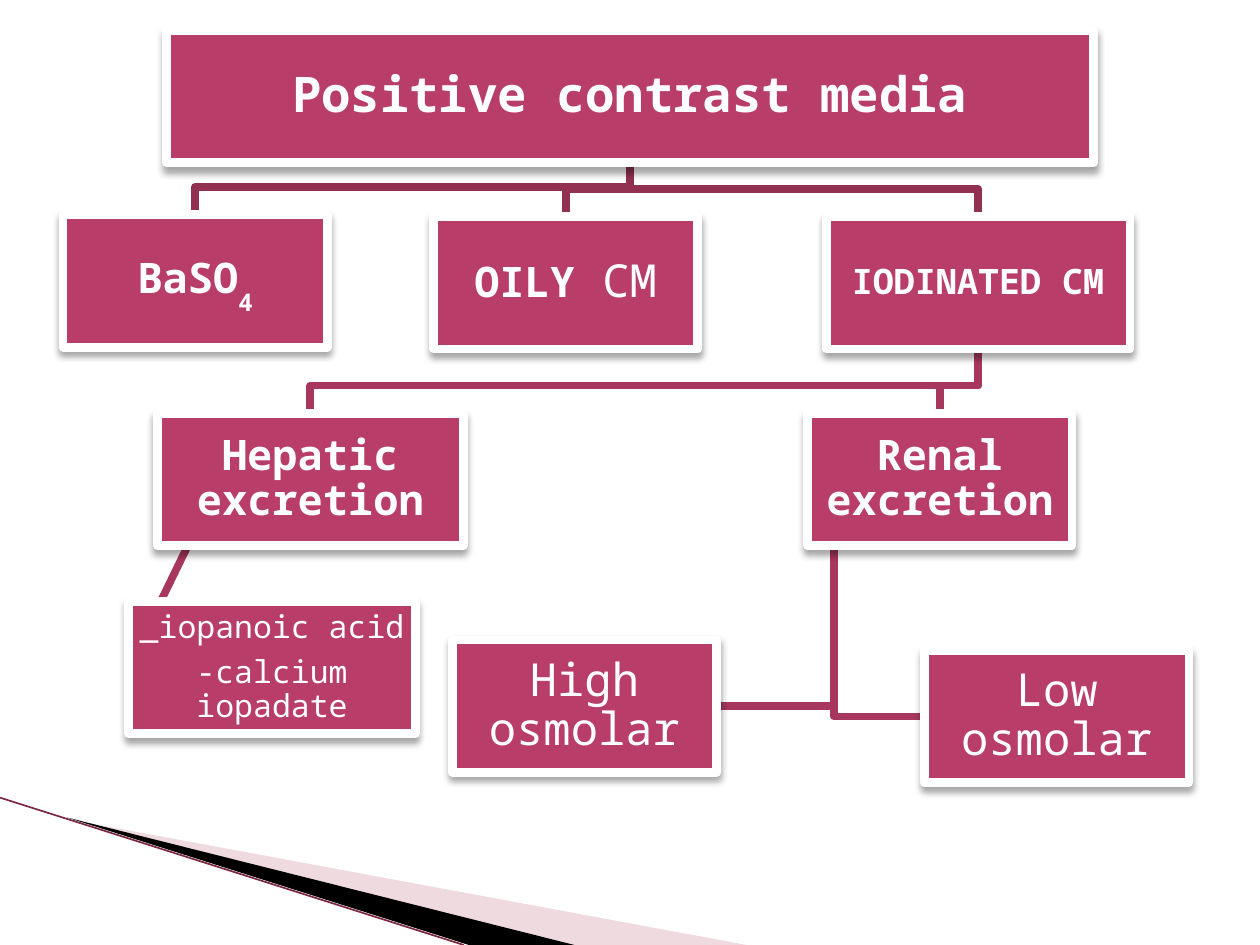
from lxml import etree
from pptx import Presentation
from pptx.dml.color import RGBColor
from pptx.enum.shapes import MSO_CONNECTOR, MSO_SHAPE
from pptx.enum.text import MSO_ANCHOR, MSO_AUTO_SIZE, PP_ALIGN
from pptx.oxml import parse_xml
from pptx.oxml.ns import qn
from pptx.util import Cm, Pt

RECT, STRAIGHT = MSO_SHAPE.RECTANGLE, MSO_CONNECTOR.STRAIGHT
MIDDLE, CENTER, NO_FIT = MSO_ANCHOR.MIDDLE, PP_ALIGN.CENTER, MSO_AUTO_SIZE.NONE

THEME = {
    "font": "Noto Sans Mono",
    "box": RGBColor(0xB8, 0x3D, 0x68),
    "white": RGBColor(0xFF, 0xFF, 0xFF),
    "black": RGBColor(0, 0, 0),
    "top": RGBColor(0x93, 0x31, 0x53),
    "low": RGBColor(0xA7, 0x37, 0x5E),
    "wedge": RGBColor(0xD8, 0xA3, 0xAF),
    "edge": RGBColor(0x7B, 0x28, 0x41),
    "title": 28, "leaf": 26, "head": 24, "iodine": 20, "drug": 18,
}
SHADOW = (
    '<a:outerShdw xmlns:a="http://schemas.openxmlformats.org/drawingml/2006/main"'
    ' blurRad="50800" dist="38100" dir="5400000" rotWithShape="0">'
    '<a:srgbClr val="000000"><a:alpha val="35000"/></a:srgbClr></a:outerShdw>'
)
HIGH = 2.67   # height of every box
DROP = 0.56   # from a branch line down to the box below it

# name: left, top, width, type size, bold, paragraphs
BOXES = {
    "title": (3.35, 0.61, 18.69, "title", True, ["Positive contrast media"]),
    "barium": (1.27, 4.33, 5.33, "head", True, ["BaSO"]),
    "iodine": (16.66, 4.37, 6.12, "iodine", True, ["IODINATED CM"]),
    "liver": (3.17, 8.33, 6.17, "head", True, ["Hepatic excretion"]),
    "drugs": (2.59, 12.12, 5.79, "drug", False,
              ["_iopanoic acid", "-calcium iopadate"]),
    "kidney": (16.28, 8.33, 5.33, "head", True, ["Renal excretion"]),
    "high": (9.12, 12.9, 5.33, "leaf", False, ["High osmolar"]),
    "low": (18.64, 13.11, 5.33, "leaf", False, ["Low osmolar"]),
    "oily": (8.74, 4.37, 5.33, "head", True, ["OILY"]),
}

deck = Presentation()
deck.slide_width, deck.slide_height = Cm(25.4), Cm(19.05)
slide = deck.slides.add_slide(deck.slide_layouts[5])
shapes = slide.shapes


def outline(points, close):
    """Freeform through points given in centimetres."""
    spots = [(Cm(x), Cm(y)) for x, y in points]
    pen = shapes.build_freeform(*spots[0])
    pen.add_line_segments(spots[1:], close=close)
    form = pen.convert_to_shape()
    form.shadow.inherit = False
    return form


# Corner wedges
wedge = outline([(1.4, 16.52), (15.05, 19.05), (11.58, 19.05)], True)
dark = outline([(1.35, 16.48), (11.58, 19.05), (9.45, 19.05)], True)
for form, color in ((wedge, "wedge"), (dark, "black")):
    form.fill.solid()
    form.fill.fore_color.rgb = THEME[color]
    form.line.fill.background()
tint = wedge.fill._xPr.find(qn("a:solidFill"))[0]
etree.SubElement(tint, qn("a:alpha"), val="40000")
edge = shapes.add_connector(STRAIGHT, 0, Cm(16.08), Cm(9.35), Cm(19.05))
edge.line.color.rgb = THEME["edge"]
edge.line.width = Pt(0.95)
etree.SubElement(edge._element.spPr, qn("a:effectLst"))

# Branch lines
routes = []
for parent, child, color in (
    ("title", "oily", "top"), ("iodine", "kidney", "low"),
    ("iodine", "liver", "low"), ("title", "iodine", "top"),
    ("title", "barium", "top"),
):
    left, top, wide = BOXES[parent][:3]
    x, y, span = BOXES[child][:3]
    start, end = left + wide / 2, x + span / 2
    routes.append((color, [(start, top + HIGH), (start, y - DROP),
                           (end, y - DROP), (end, y)]))

left, top, wide = BOXES["kidney"][:3]
stem, foot = left + wide / 10, top + HIGH
for child, share in (("low", 0), ("high", 1)):
    x, y, span = BOXES[child][:3]
    mid = y + HIGH / 2
    routes.append(("low", [(stem, foot), (stem, mid), (x + span * share, mid)]))

left, top, wide = BOXES["liver"][:3]
x, y = BOXES["drugs"][:2]
routes.append(("low", [(left + wide / 10, top + HIGH), (x, y + HIGH / 2)]))

for color, points in routes:
    branch = outline(points, False)
    branch.fill.background()
    branch.line.color.rgb = THEME[color]
    branch.line.width = Pt(4.33)

# Boxes
made = {}
for name, (left, top, wide, size, bold, lines) in BOXES.items():
    place = Cm(left), Cm(top), Cm(wide), Cm(HIGH)
    if name == "title":
        box = shapes.title
        box.left, box.top, box.width, box.height = place
        box.element.getparent().append(box.element)
    else:
        box = shapes.add_shape(RECT, *place)
    made[name] = box
    box.fill.solid()
    box.fill.fore_color.rgb = THEME["box"]
    box.line.color.rgb = THEME["white"]
    box.line.width = Pt(5)
    box.shadow.inherit = False
    box.element.spPr.find(qn("a:effectLst")).append(parse_xml(SHADOW))
    frame = box.text_frame
    frame.word_wrap = True
    frame.auto_size = NO_FIT
    frame.vertical_anchor = MIDDLE
    frame.margin_left = frame.margin_right = Cm(0.04)
    frame.margin_top = frame.margin_bottom = Cm(0.04)
    frame.text = "\n".join(lines)
    for para in frame.paragraphs:
        para.alignment = CENTER
        para.line_spacing = 0.9
        para.space_after = Pt(THEME[size] * 0.35)
        font = para.font
        font.name, font.size, font.bold = THEME["font"], Pt(THEME[size]), bold
        font.color.rgb = THEME["white"]

# Runs that differ from their box
four = made["barium"].text_frame.paragraphs[0].add_run()
four.text = "4"
four._r.get_or_add_rPr().set("baseline", "-42000")
tail = made["oily"].text_frame.paragraphs[0].add_run()
tail.text = " CM"
tail.font.size, tail.font.bold = Pt(THEME["leaf"]), False

deck.save("out.pptx")
